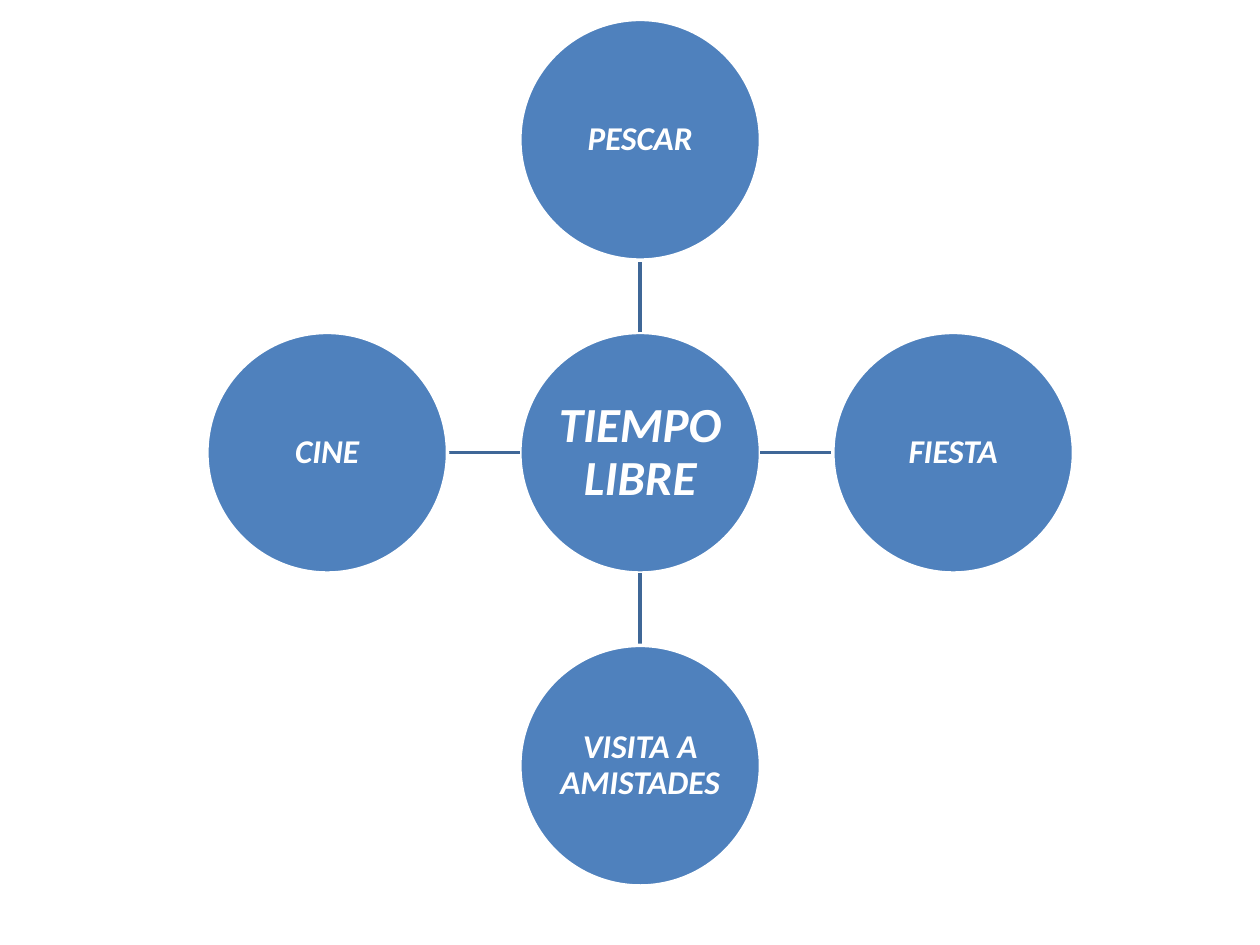
import pptx
import pptx.util
import pptx.dml.color
import pptx.enum.shapes
import pptx.enum.text
import lxml.etree
import pptx.oxml.ns

Pt = pptx.util.Pt
SIZE = 137.5  # circle diameter
STEP = 178.85  # hub centre to outer centre
HUB = (365.8, 258.7)
SPOKES = [
    ("PESCAR", 0, -1),
    ("FIESTA", 1, 0),
    ("VISITA A AMISTADES", 0, 1),
    ("CINE", -1, 0),
]


def color(text):
    return pptx.dml.color.RGBColor.from_string(text)


class Board:
    font = "Calibri"
    blue = "4F81BD"
    dark = "3F6797"
    white = "FFFFFF"
    weight = 2

    def __init__(self, slide):
        self.slide = slide

    def stroke(self, line, hue):
        line.color.rgb = color(hue)
        line.width = Pt(self.weight)

    def circle(self, text, x, y, size, inset):
        """Draw a labelled circle centred on x, y."""
        shape = self.slide.shapes.add_shape(
            pptx.enum.shapes.MSO_SHAPE.OVAL,
            Pt(x - SIZE / 2), Pt(y - SIZE / 2), Pt(SIZE), Pt(SIZE))
        shape.shadow.inherit = False
        shape.fill.solid()
        shape.fill.fore_color.rgb = color(self.blue)
        self.stroke(shape.line, self.white)
        frame = shape.text_frame
        frame.word_wrap = True
        frame.vertical_anchor = pptx.enum.text.MSO_ANCHOR.MIDDLE
        frame.margin_left = frame.margin_right = Pt(inset)
        frame.margin_top = frame.margin_bottom = Pt(inset)
        par = frame.paragraphs[0]
        par.text = text
        par.alignment = pptx.enum.text.PP_ALIGN.CENTER
        par.line_spacing = 0.9
        font = par.font
        font.name, font.size = self.font, Pt(size)
        font.bold = font.italic = True
        font.color.rgb = color(self.white)

    def link(self, x1, y1, x2, y2):
        line = self.slide.shapes.add_connector(
            pptx.enum.shapes.MSO_CONNECTOR.STRAIGHT,
            Pt(x1), Pt(y1), Pt(x2), Pt(y2))
        self.stroke(line.line, self.dark)
        lxml.etree.SubElement(
            line._element.spPr, pptx.oxml.ns.qn("a:effectLst"))


def main():
    deck = pptx.Presentation()
    deck.slide_width, deck.slide_height = Pt(720), Pt(540)
    board = Board(deck.slides.add_slide(deck.slide_layouts[6]))
    x, y = HUB
    near, far = SIZE / 2, STEP - SIZE / 2
    board.circle("TIEMPO LIBRE", x, y, 28, 1.4)
    for text, dx, dy in SPOKES:
        board.link(x + dx * near, y + dy * near, x + dx * far, y + dy * far)
        board.circle(text, x + dx * STEP, y + dy * STEP, 19, 0.9)
    deck.save("out.pptx")


if __name__ == "__main__":
    main()
